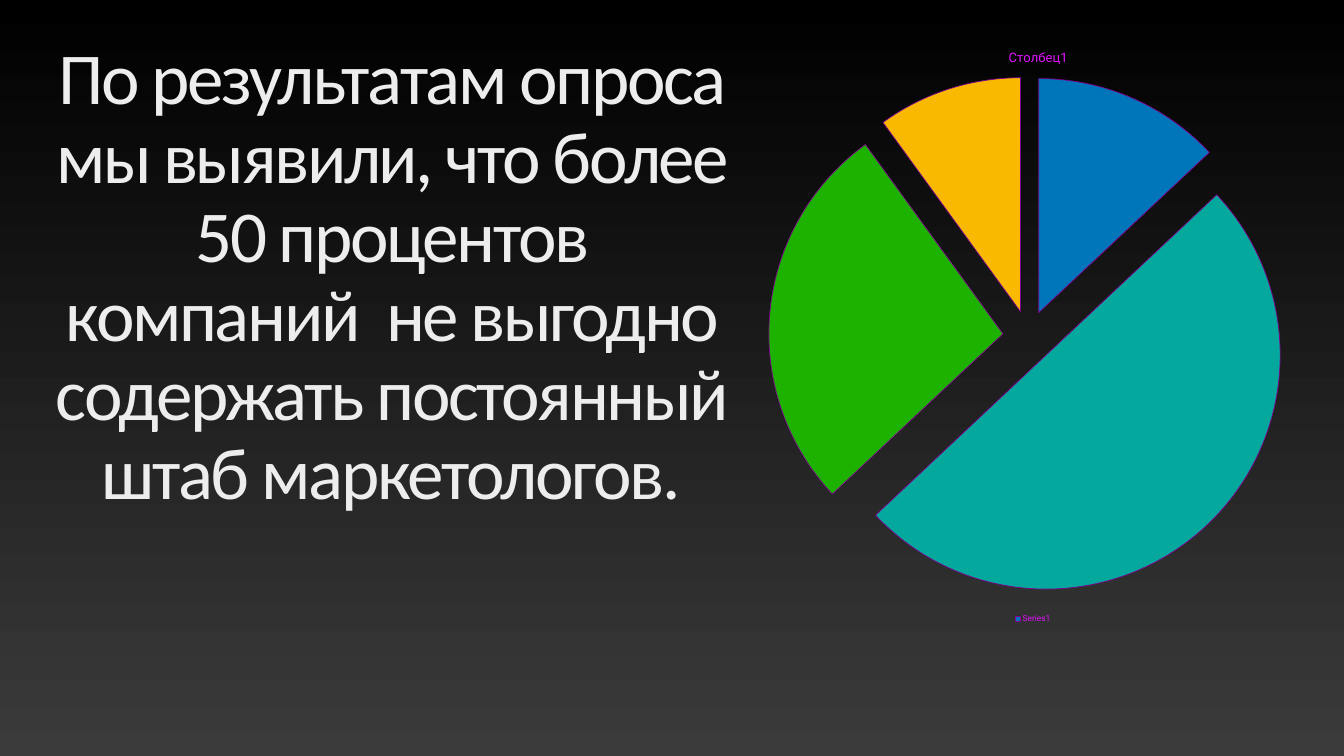
from dataclasses import dataclass

from lxml.etree import SubElement
from pptx import Presentation
from pptx.chart.data import CategoryChartData
from pptx.dml.color import RGBColor as Rgb
from pptx.enum.chart import XL_CHART_TYPE as ChartType, XL_LEGEND_POSITION as LegendPosition
from pptx.enum.text import MSO_ANCHOR as Anchor, PP_ALIGN as Align
from pptx.oxml import parse_xml
from pptx.oxml.ns import nsdecls, qn
from pptx.util import Inches, Pt


@dataclass(frozen=True)
class Theme:
    backdrop: tuple = ("000000", "3B3B3B")
    sectors: tuple = ("0076BA", "05A89D", "1DB100", "F9B900")
    headline: str = "EDEDED"
    caption: str = "E312FF"
    outline: str = "810092"
    headline_font: str = "Calibri"
    chart_font: str = "Roboto"
    headline_size: float = 104.4
    headline_tracking: int = -350
    chart_title_size: float = 18.6
    legend_size: float = 12
    chart_size: float = 10
    outline_width: float = 1


class SurveySlide:
    def __init__(self, slide, theme):
        self.slide = slide
        self.theme = theme

    def style_font(self, font, name, size, color):
        font.name = name
        font.size = Pt(size)
        font.bold = False
        font.color.rgb = Rgb.from_string(color)

    def paint(self, part, color):
        part.fill.solid()
        part.fill.fore_color.rgb = Rgb.from_string(color)
        part.line.color.rgb = Rgb.from_string(self.theme.outline)
        part.line.width = Pt(self.theme.outline_width)

    def place(self, owner, target=None, **fractions):
        layout = owner.find(qn("c:layout"))
        if layout is None:
            layout = parse_xml(f"<c:layout {nsdecls('c')}/>")
            previous = owner.find(qn("c:tx"))
            if previous is None:
                owner.insert(0, layout)
            else:
                previous.addnext(layout)
        for child in list(layout):
            layout.remove(child)
        manual = SubElement(layout, qn("c:manualLayout"))
        if target:
            SubElement(manual, qn("c:layoutTarget")).set("val", target)
        for axis in ("x", "y"):
            SubElement(manual, qn(f"c:{axis}Mode")).set("val", "edge")
        for name, value in fractions.items():
            SubElement(manual, qn(f"c:{name}")).set("val", str(value))

    def background(self):
        fill = self.slide.background.fill
        fill.gradient()
        fill.gradient_angle = 270
        for position, (stop, color) in enumerate(zip(fill.gradient_stops, self.theme.backdrop)):
            stop.position = position
            stop.color.rgb = Rgb.from_string(color)

    def headline(self, text, *bounds):
        frame = self.slide.shapes.add_textbox(*map(Inches, bounds)).text_frame
        frame.word_wrap = True
        frame.vertical_anchor = Anchor.BOTTOM
        frame.margin_left = frame.margin_right = Inches(0.06)
        frame.margin_top = frame.margin_bottom = Inches(0.06)
        paragraph = frame.paragraphs[0]
        paragraph.alignment = Align.CENTER
        paragraph.line_spacing = 0.9
        run = paragraph.add_run()
        run.text = text
        theme = self.theme
        self.style_font(run.font, theme.headline_font, theme.headline_size, theme.headline)
        run.font._element.set("spc", str(theme.headline_tracking))

    def pie(self, title, series_name, shares, explosion, *bounds):
        theme = self.theme
        survey = CategoryChartData()
        survey.categories = [""] * len(shares)
        survey.add_series(series_name, shares)
        chart = self.slide.shapes.add_chart(ChartType.PIE, *map(Inches, bounds), survey).chart
        self.style_font(chart.font, theme.chart_font, theme.chart_size, theme.outline)

        chart.has_title = True
        heading = chart.chart_title.text_frame.paragraphs[0].add_run()
        heading.text = title
        self.style_font(heading.font, theme.chart_font, theme.chart_title_size, theme.caption)
        chart.chart_title.include_in_layout = False
        self.place(chart.chart_title._element, x=0.47, y=0.03)

        chart.has_legend = True
        chart.legend.position = LegendPosition.BOTTOM
        chart.legend.include_in_layout = False
        self.style_font(chart.legend.font, theme.chart_font, theme.legend_size, theme.caption)

        plot = chart.plots[0]
        plot.vary_by_categories = False
        answers = plot.series[0]
        self.paint(answers.format, theme.sectors[0])
        answers._element.find(qn("c:spPr")).addnext(
            parse_xml(f'<c:explosion {nsdecls("c")} val="{explosion}"/>'))
        for index, color in enumerate(theme.sectors):
            self.paint(answers.points[index].format, color)
        plot_area = chart._chartSpace.find(qn("c:chart")).find(qn("c:plotArea"))
        self.place(plot_area, "inner", x=0.2, y=0.08, w=0.59, h=0.87)


def main():
    deck = Presentation()
    deck.slide_width, deck.slide_height = Inches(26.67), Inches(15)
    survey = SurveySlide(deck.slides.add_slide(deck.slide_layouts[6]), Theme())
    survey.background()
    survey.headline(
        "По результатам опроса мы выявили, что более 50 процентов "
        "компаний  не выгодно содержать постоянный штаб маркетологов.",
        1.02, 1.07, 13.49, 9.21)
    survey.pie("Столбец1", "Series1", (13, 50, 27, 10), 11, 11.61, 0.57, 17.78, 11.85)
    deck.save("out.pptx")


if __name__ == "__main__":
    main()
